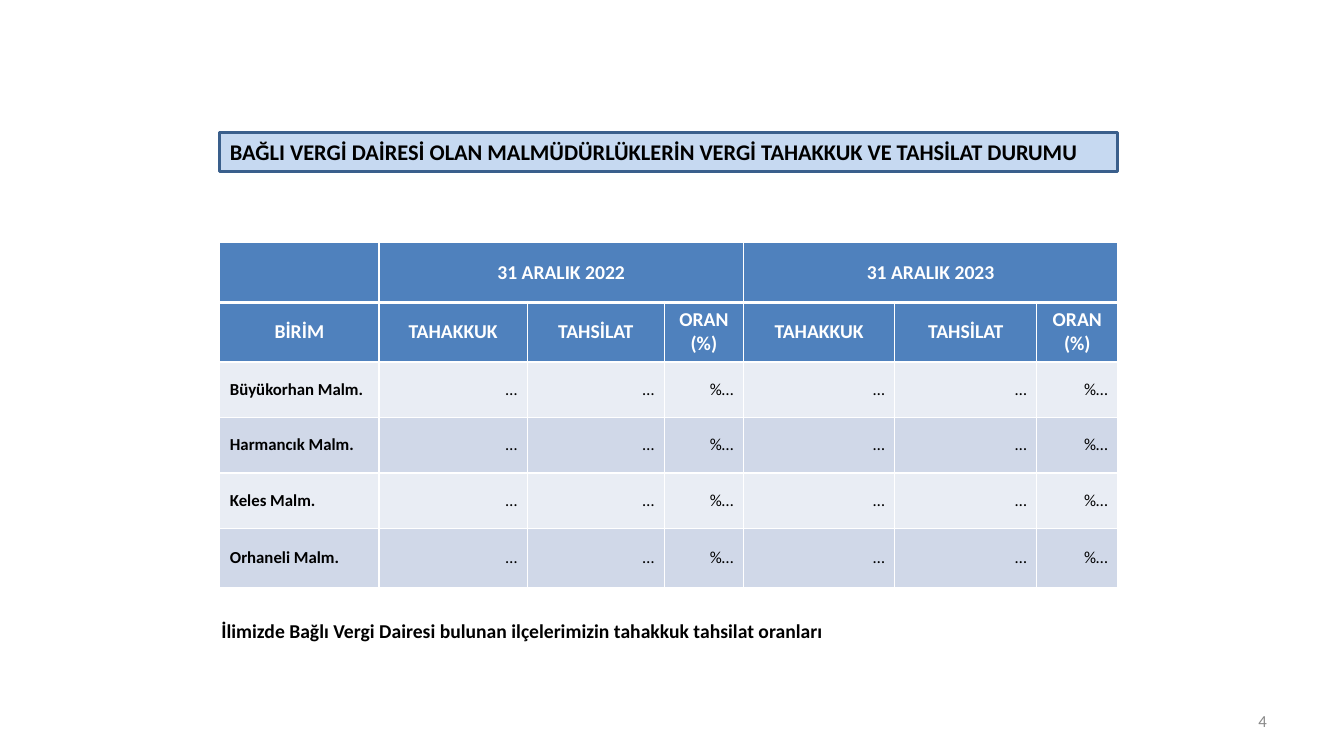
from dataclasses import dataclass

from lxml.etree import SubElement
from pptx import Presentation
from pptx.dml.color import RGBColor
from pptx.enum.text import MSO_ANCHOR, MSO_AUTO_SIZE, PP_ALIGN
from pptx.oxml.ns import qn
from pptx.util import Cm, Pt

HUES = {
    "banner": "C6D9F1",
    "edge": "3A5F8C",
    "head": "4F81BD",
    "light": "E9EDF4",
    "dark": "D0D8E8",
    "white": "FFFFFF",
    "black": "000000",
    "grey": "898989",
}
FONT = "Calibri"


@dataclass
class Style:
    size: int
    hue: str = "black"
    bold: bool = False
    align: PP_ALIGN = PP_ALIGN.LEFT


@dataclass
class Box:
    left: float
    top: float
    width: float
    height: float

    def place(self) -> list:
        return [Cm(n) for n in (self.left, self.top, self.width, self.height)]


@dataclass
class Note:
    text: str
    box: Box
    style: Style
    anchor: MSO_ANCHOR
    fit: MSO_AUTO_SIZE


BANNER = Box(5.54, 3.33, 22.63, 0.99)
GRID = Box(5.54, 6.12, 22.63, 8.7)
COLS = [4.01, 3.74, 3.45, 2, 3.81, 3.58, 2.04]
ROWS = [1.5, 1.5, 1.4, 1.4, 1.4, 1.5]
YEARS = ["31 ARALIK 2022", "31 ARALIK 2023"]
HEADS = ["TAHAKKUK", "TAHSİLAT", "ORAN\n(%)"]
BLANKS = ["…", "…", "%…"]
UNITS = ["Büyükorhan Malm.", "Harmancık Malm.", "Keles Malm.", "Orhaneli Malm."]

HEAD = Style(14, "white", True, PP_ALIGN.CENTER)
UNIT = Style(12, bold=True)
VALUE = Style(12, align=PP_ALIGN.RIGHT)

NOTES = [
    Note("İlimizde Bağlı Vergi Dairesi bulunan ilçelerimizin tahakkuk tahsilat oranları",
         Box(5.33, 15.47, 22.71, 0.86), Style(14, bold=True, align=PP_ALIGN.JUSTIFY),
         MSO_ANCHOR.TOP, MSO_AUTO_SIZE.SHAPE_TO_FIT_TEXT),
    Note("4", Box(24.28, 17.65, 7.9, 1.02), Style(12, "grey", align=PP_ALIGN.RIGHT),
         MSO_ANCHOR.MIDDLE, MSO_AUTO_SIZE.NONE),
]


def tint(name: str) -> RGBColor:
    return RGBColor.from_string(HUES[name])


def write(frame, text: str, style: Style) -> None:
    frame.text = text
    for para in frame.paragraphs:
        para.alignment = style.align
        for run in para.runs:
            run.font.name = FONT
            run.font.size = Pt(style.size)
            run.font.bold = style.bold
            run.font.color.rgb = tint(style.hue)


def border(cell, base: int) -> None:
    props = cell._tc.get_or_add_tcPr()
    for side in "LRTB":
        width = base if side == "B" else 1
        line = SubElement(props, qn(f"a:ln{side}"), w=str(Pt(width)))
        fill = SubElement(line, qn("a:solidFill"))
        SubElement(fill, qn("a:srgbClr"), val=HUES["white"])


def draw_title(slide) -> None:
    title = slide.shapes.title
    title.left, title.top, title.width, title.height = BANNER.place()
    # Rounded outline for the title placeholder
    geom = SubElement(title._element.spPr, qn("a:prstGeom"), prst="roundRect")
    SubElement(geom, qn("a:avLst"))
    title.fill.solid()
    title.fill.fore_color.rgb = tint("banner")
    title.line.color.rgb = tint("edge")
    title.line.width = Pt(2)
    frame = title.text_frame
    frame.auto_size = MSO_AUTO_SIZE.NONE
    frame.vertical_anchor = MSO_ANCHOR.MIDDLE
    write(frame, "BAĞLI VERGİ DAİRESİ OLAN MALMÜDÜRLÜKLERİN VERGİ TAHAKKUK VE TAHSİLAT DURUMU",
          Style(16, bold=True))


def draw_table(slide) -> None:
    table = slide.shapes.add_table(len(ROWS), len(COLS), *GRID.place()).table
    for col, width in zip(table.columns, COLS):
        col.width = Cm(width)
    for row, height in zip(table.rows, ROWS):
        row.height = Cm(height)

    # Each year spans its three columns
    top = [""]
    for year in YEARS:
        top += [year, "", ""]
    data = [top, ["BİRİM"] + HEADS * 2] + [[unit] + BLANKS * 2 for unit in UNITS]
    for r, texts in enumerate(data):
        hue = "head" if r < 2 else ("light", "dark")[r % 2]
        for c, text in enumerate(texts):
            cell = table.cell(r, c)
            style = HEAD if r < 2 else VALUE if c else UNIT
            write(cell.text_frame, text, style)
            cell.vertical_anchor = MSO_ANCHOR.MIDDLE
            border(cell, 1 if r else 3)
            cell.fill.solid()
            cell.fill.fore_color.rgb = tint(hue)
    for c in (1, 4):
        table.cell(0, c).merge(table.cell(0, c + 2))


def draw_note(slide, note: Note) -> None:
    frame = slide.shapes.add_textbox(*note.box.place()).text_frame
    frame.word_wrap = True
    frame.auto_size = note.fit
    frame.vertical_anchor = note.anchor
    write(frame, note.text, note.style)


def main() -> None:
    deck = Presentation()
    deck.slide_width, deck.slide_height = Cm(33.87), Cm(19.05)
    slide = deck.slides.add_slide(deck.slide_layouts[5])
    draw_title(slide)
    draw_table(slide)
    # Caption and page number
    for note in NOTES:
        draw_note(slide, note)
    deck.save("out.pptx")


if __name__ == "__main__":
    main()
